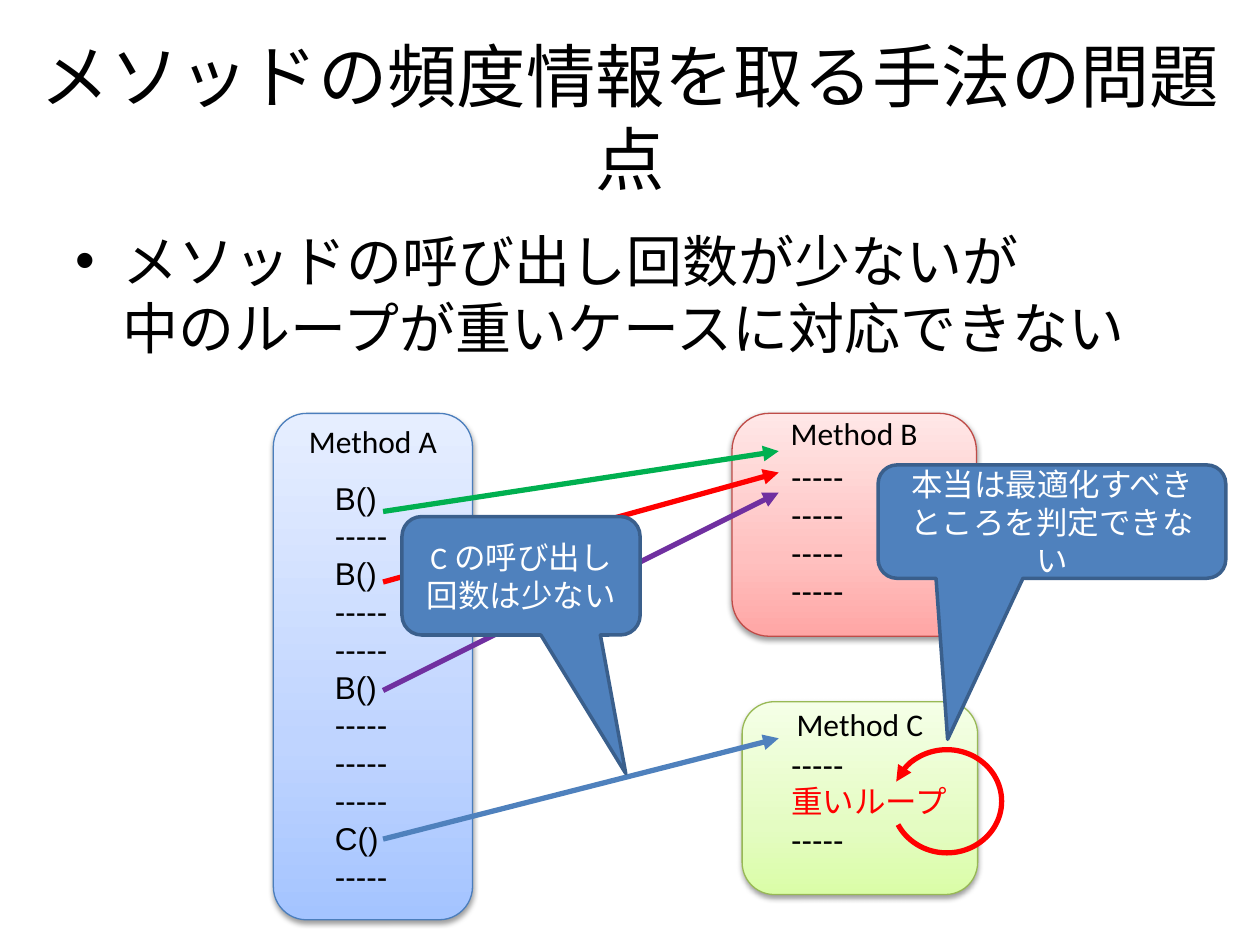
from dataclasses import dataclass
from copy import deepcopy
from lxml.etree import SubElement
from pptx import Presentation
from pptx.dml.color import RGBColor as Rgb
from pptx.enum.shapes import MSO_CONNECTOR as Link, MSO_SHAPE as Preset
from pptx.enum.text import MSO_ANCHOR as Anchor, MSO_AUTO_SIZE as Fit, PP_ALIGN as Align
from pptx.oxml.ns import qn
from pptx.util import Pt


@dataclass(frozen=True)
class Theme:
    heading: str = "Calibri"
    code: str = "Arial"
    title_size: float = 39.6
    body_size: float = 32
    text_size: float = 18
    black: str = "000000"
    white: str = "FFFFFF"
    red: str = "FF0000"
    green: str = "00B050"
    purple: str = "7030A0"
    blue: str = "4F81BD"
    callout_edge: str = "3A5F8C"
    method_a: tuple = ("A4C4FF", "BFD4FF", "E6EEFF", "4B7EBC")
    method_b: tuple = ("FFA6A5", "FFC0BF", "FFE7E7", "BF4C48")
    method_c: tuple = ("DAFDA7", "E4FCC2", "F5FFE7", "98B955")


THEME = Theme()
DASHES = "-----"


def assign(target, values):
    for name, value in values.items():
        setattr(target, name, value)


def points(*values):
    return [Pt(value) for value in values]


def write(box, lines, size, font, color, align=Align.LEFT, frame_format=None, highlights=None):
    frame = box.text_frame
    assign(frame, {"word_wrap": True, **(frame_format or {})})
    for index, line in enumerate(lines):
        para = frame.paragraphs[0] if index == 0 else frame.add_paragraph()
        para.text = line
        para.alignment = align
        for span in para.runs:
            assign(span.font, {"size": Pt(size), "name": font})
            span.font.color.rgb = Rgb.from_string((highlights or {}).get(line, color))


def stroke(line, color, width):
    line.color.rgb = Rgb.from_string(color)
    line.width = Pt(width)


def add_arrowhead(shape, end):
    outline = shape._element.spPr.find(qn("a:ln"))
    SubElement(outline, qn(f"a:{end}"), type="triangle")


def add_title(page, text):
    box = page.shapes.add_textbox(*points(0, 21.6, 720, 90))
    write(box, [text], THEME.title_size, THEME.heading, THEME.black, Align.CENTER,
          {"vertical_anchor": Anchor.MIDDLE})


def add_bullet(page, text):
    box = page.shapes.add_textbox(*points(36, 126, 648, 356.4))
    write(box, [text], THEME.body_size, THEME.heading, THEME.black)
    para = box.text_frame.paragraphs[0]
    para.space_before = Pt(6.4)
    props = para._p.get_or_add_pPr()
    for name, value in {"marL": Pt(27), "indent": Pt(-27)}.items():
        props.set(name, str(int(value)))
    SubElement(props, qn("a:buFont"), typeface="Arial")
    SubElement(props, qn("a:buChar"), char="•")


def add_method(page, label, area, label_center, palette):
    shape = page.shapes.add_shape(Preset.ROUNDED_RECTANGLE, *points(*area))
    *shades, edge = palette
    shape.fill.gradient()
    shape.fill.gradient_angle = 90
    stops = shape._element.spPr.find(qn("a:gradFill")).find(qn("a:gsLst"))
    stops.insert(1, deepcopy(stops[0]))
    for stop, position, shade in zip(shape.fill.gradient_stops, (0, 0.35, 1), shades):
        stop.position = position
        stop.color.rgb = Rgb.from_string(shade)
    stroke(shape.line, edge, 0.75)
    shape.shadow.inherit = False
    effects = shape._element.spPr.find(qn("a:effectLst"))
    shadow = SubElement(effects, qn("a:outerShdw"), blurRad=str(int(Pt(3.1))),
                        dist=str(int(Pt(1.6))), dir="5400000", rotWithShape="0")
    tint = SubElement(shadow, qn("a:srgbClr"), val=THEME.black)
    SubElement(tint, qn("a:alpha"), val="38000")
    write(shape, [label], THEME.text_size, THEME.heading, THEME.black, Align.CENTER,
          {"vertical_anchor": Anchor.MIDDLE, "margin_top": 0,
           "margin_bottom": Pt(area[3] - 2 * label_center)})


def add_code(page, lines, area, highlights=None):
    box = page.shapes.add_textbox(*points(*area))
    write(box, lines, THEME.text_size, THEME.code, THEME.black,
          frame_format={"auto_size": Fit.SHAPE_TO_FIT_TEXT}, highlights=highlights)


def add_call(page, start, end, color):
    arrow = page.shapes.add_connector(Link.STRAIGHT, *points(*start, *end))
    stroke(arrow.line, color, 3)
    add_arrowhead(arrow, "tailEnd")
    SubElement(arrow._element.spPr, qn("a:effectLst"))


def add_loop(page, area):
    arc = page.shapes.add_shape(Preset.ARC, *points(*area))
    arc.adjustments[0], arc.adjustments[1] = 120.74, 92.69
    arc.fill.background()
    arc.shadow.inherit = False
    stroke(arc.line, THEME.red, 3)
    add_arrowhead(arc, "headEnd")


def add_callout(page, lines, area, tip):
    shape = page.shapes.add_shape(Preset.ROUNDED_RECTANGULAR_CALLOUT, *points(*area))
    shape.adjustments[0], shape.adjustments[1] = tip
    shape.fill.solid()
    shape.fill.fore_color.rgb = Rgb.from_string(THEME.blue)
    shape.shadow.inherit = False
    stroke(shape.line, THEME.callout_edge, 2)
    write(shape, lines, THEME.text_size, THEME.heading, THEME.white, Align.CENTER,
          {"vertical_anchor": Anchor.MIDDLE})


def main():
    deck = Presentation()
    assign(deck, {"slide_width": Pt(720), "slide_height": Pt(540)})
    page = deck.slides.add_slide(deck.slide_layouts[6])

    add_title(page, "メソッドの頻度情報を取る手法の問題点")
    add_bullet(page, "メソッドの呼び出し回数が少ないが\v中のループが重いケースに対応できない")

    add_method(page, "Method B", (418.3, 236.2, 139.7, 127.4), 11, THEME.method_b)
    add_method(page, "Method C", (424.1, 401, 134.6, 110.2), 12.5, THEME.method_c)
    add_method(page, "Method A", (156.2, 236.2, 113.8, 289.4), 16, THEME.method_a)

    call_left, call_right = 218.9, 445
    add_call(page, (call_left, 292.3), (call_right, 257.8), THEME.green)
    add_call(page, (call_left, 332.6), (call_right, 270), THEME.red)
    add_call(page, (call_left, 479.5), (call_right, 421.9), THEME.blue)

    heavy_loop = "重いループ"
    method_a_lines = ["B()", DASHES, "B()", *[DASHES] * 2, "B()", *[DASHES] * 3, "C()", DASHES]
    add_code(page, method_a_lines, (184.3, 270, 56.9, 247))
    add_code(page, [DASHES, heavy_loop, DASHES], (call_right, 421.9, 118.8, 72.7),
             {heavy_loop: THEME.red})
    add_code(page, [DASHES] * 4, (call_right, 257.8, 56.9, 94.3))

    add_call(page, (call_left, 394.6), (call_right, 281.5), THEME.purple)
    add_loop(page, (509.8, 428.4, 62.6, 59))
    add_callout(page, ["本当は最適化すべき", "ところを判定できない"],
                (501.8, 265.7, 198.7, 64.8), (-0.3, 1.92))
    add_callout(page, ["C の呼び出し", "回数は少ない"],
                (229.7, 295.2, 136.1, 67.7), (0.44, 1.67))

    deck.save("out.pptx")


if __name__ == "__main__":
    main()
